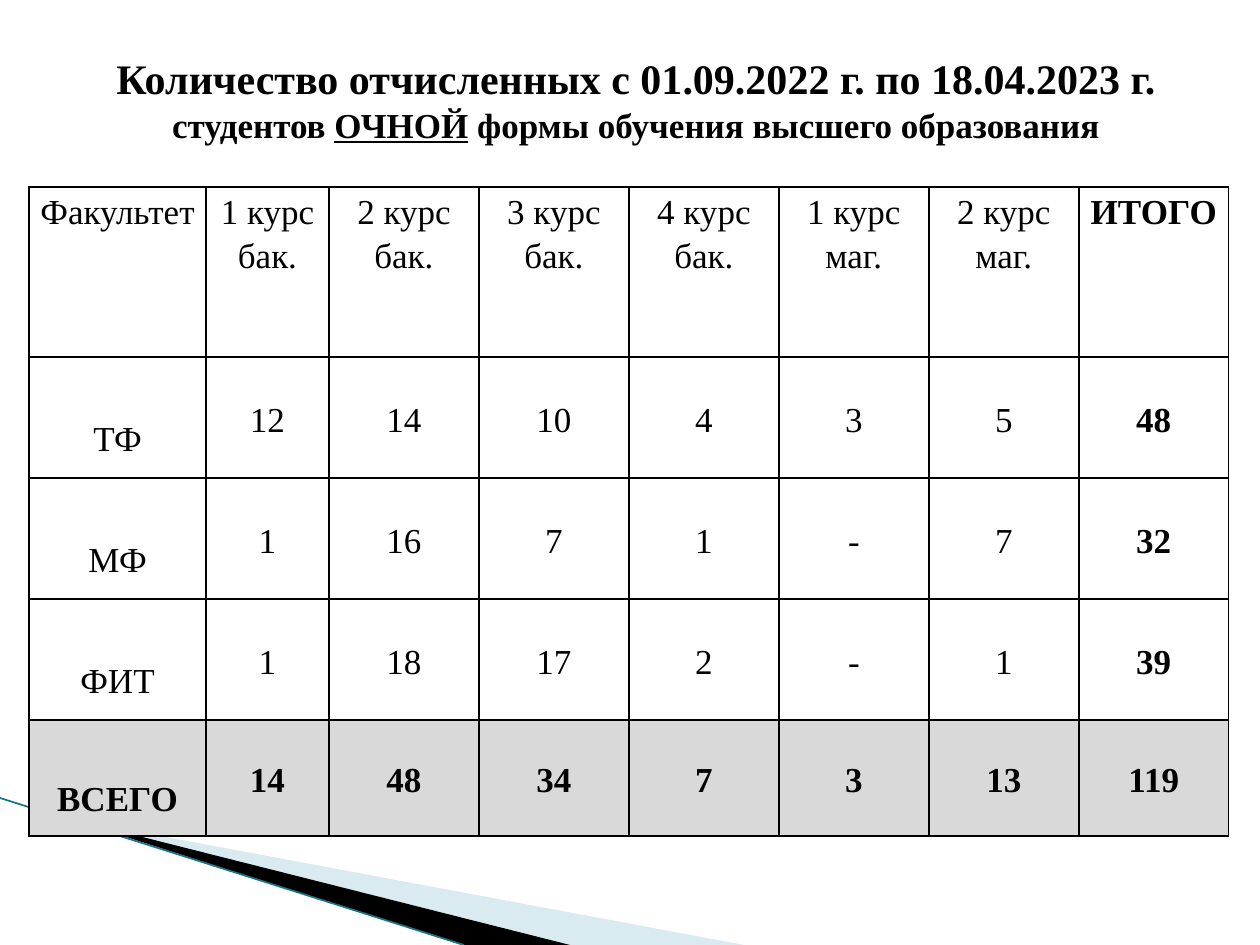
from dataclasses import dataclass

from lxml import etree
from pptx import Presentation
from pptx import util as u
from pptx.dml.color import RGBColor
from pptx.enum import shapes, text
from pptx.oxml import ns

EMU_PER_PX = 914400 / 126


@dataclass(frozen=True)
class Theme:
    font: str = "Times New Roman"
    ink: str = "000000"
    total_fill: str = "D9D9D9"
    pale_blue: str = "A0CBDC"
    teal: str = "1B7587"
    heading_size: int = 24
    body_size: int = 20
    border_width: int = 1


@dataclass(frozen=True)
class Wedge:
    points: tuple[tuple[int, int], ...]
    color: str
    opacity: int = 100


@dataclass(frozen=True)
class TitleRun:
    words: str
    size: int
    underline: bool = False


THEME = Theme()
WEDGES = [
    Wedge(((69, 819), (744, 945), (570, 945)), THEME.pale_blue, 40),
    Wedge(((67, 818), (570, 945), (462, 945)), THEME.ink),
]
TITLE_LINES = [
    [TitleRun("Количество отчисленных с 01.09.2022 г. по 18.04.2023 г.", THEME.heading_size)],
    [
        TitleRun("студентов ", THEME.body_size),
        TitleRun("ОЧНОЙ", THEME.body_size, underline=True),
        TitleRun(" формы обучения высшего образования", THEME.body_size),
    ],
]
ROWS = [
    ["Факультет", "1 курс бак.", "2 курс бак.", "3 курс бак.", "4 курс бак.",
     "1 курс маг.", "2 курс маг.", "ИТОГО"],
    ["ТФ", "12", "14", "10", "4", "3", "5", "48"],
    ["МФ", "1", "16", "7", "1", "-", "7", "32"],
    ["ФИТ", "1", "18", "17", "2", "-", "1", "39"],
    ["ВСЕГО", "14", "48", "34", "7", "3", "13", "119"],
]
COLUMN_WIDTHS = [177, 123] + [150] * 6
ROW_HEIGHTS = [170, 121, 121, 121, 116]
LABEL_DROP = 38  # top inset that lowers the faculty names


def px(length: int) -> u.Emu:
    return u.Emu(round(length * EMU_PER_PX))


def style_run(run, size: int, bold: bool) -> None:
    run.font.name = THEME.font
    run.font.size = u.Pt(size)
    run.font.bold = bold
    run.font.color.rgb = RGBColor.from_string(THEME.ink)


def draw_wedge(slide, wedge: Wedge) -> None:
    start, *others = wedge.points
    builder = slide.shapes.build_freeform(*start, scale=EMU_PER_PX)
    builder.add_line_segments(others, close=True)
    shape = builder.convert_to_shape()
    shape.shadow.inherit = False
    shape.line.fill.background()
    shape.fill.solid()
    shape.fill.fore_color.rgb = RGBColor.from_string(wedge.color)
    if wedge.opacity < 100:
        color = shape.fill._xPr.find(".//" + ns.qn("a:srgbClr"))
        etree.SubElement(color, ns.qn("a:alpha"), val=str(wedge.opacity * 1000))


def draw_edge_line(slide) -> None:
    line = slide.shapes.add_connector(
        shapes.MSO_CONNECTOR.STRAIGHT, px(0), px(798), px(464), px(945))
    line.line.color.rgb = RGBColor.from_string(THEME.teal)
    line.line.width = u.Pt(THEME.border_width)
    etree.SubElement(line._element.spPr, ns.qn("a:effectLst"))


def draw_title(slide) -> None:
    frame = slide.shapes.add_textbox(px(69), px(20), px(1134), px(158)).text_frame
    frame.word_wrap = True
    frame.vertical_anchor = text.MSO_ANCHOR.MIDDLE
    paragraph = frame.paragraphs[0]
    paragraph.alignment = text.PP_ALIGN.CENTER
    for index, line in enumerate(TITLE_LINES):
        if index:
            paragraph.add_line_break()
        for part in line:
            run = paragraph.add_run()
            run.text = part.words
            style_run(run, part.size, bold=True)
            run.font.underline = part.underline


def add_borders(cell) -> None:
    properties = cell._tc.get_or_add_tcPr()
    for side in ("lnL", "lnR", "lnT", "lnB"):
        border = etree.SubElement(properties, ns.qn(f"a:{side}"),
                                  w=str(u.Pt(THEME.border_width)))
        fill = etree.SubElement(border, ns.qn("a:solidFill"))
        etree.SubElement(fill, ns.qn("a:srgbClr"), val=THEME.ink)


def fill_cell(cell, words: str, header: bool, label: bool, total: bool, bold: bool) -> None:
    cell.margin_left = cell.margin_right = px(9)
    cell.margin_top = px(LABEL_DROP if label and not header else 0)
    cell.margin_bottom = 0
    cell.vertical_anchor = text.MSO_ANCHOR.TOP if header else text.MSO_ANCHOR.MIDDLE
    add_borders(cell)
    if total:
        cell.fill.solid()
        cell.fill.fore_color.rgb = RGBColor.from_string(THEME.total_fill)
    else:
        cell.fill.background()
    cell.text_frame.text = words
    paragraph = cell.text_frame.paragraphs[0]
    paragraph.alignment = text.PP_ALIGN.CENTER
    paragraph.line_spacing = 1.15
    style_run(paragraph.runs[0], THEME.body_size, bold)


def draw_table(slide) -> None:
    table = slide.shapes.add_table(
        len(ROWS), len(COLUMN_WIDTHS), px(29), px(187),
        px(sum(COLUMN_WIDTHS)), px(sum(ROW_HEIGHTS))).table
    table.first_row = table.horz_banding = False
    for column, width in zip(table.columns, COLUMN_WIDTHS):
        column.width = px(width)
    for row, height in zip(table.rows, ROW_HEIGHTS):
        row.height = px(height)
    for r, values in enumerate(ROWS):
        total = r == len(ROWS) - 1
        for c, words in enumerate(values):
            fill_cell(table.cell(r, c), words, header=r == 0, label=c == 0,
                      total=total, bold=total or c == len(values) - 1)


def main() -> None:
    presentation = Presentation()
    presentation.slide_width, presentation.slide_height = px(1260), px(945)
    slide = presentation.slides.add_slide(presentation.slide_layouts[6])

    # Corner decoration
    for wedge in WEDGES:
        draw_wedge(slide, wedge)
    draw_edge_line(slide)

    # Heading and figures
    draw_title(slide)
    draw_table(slide)
    presentation.save("out.pptx")


if __name__ == "__main__":
    main()
